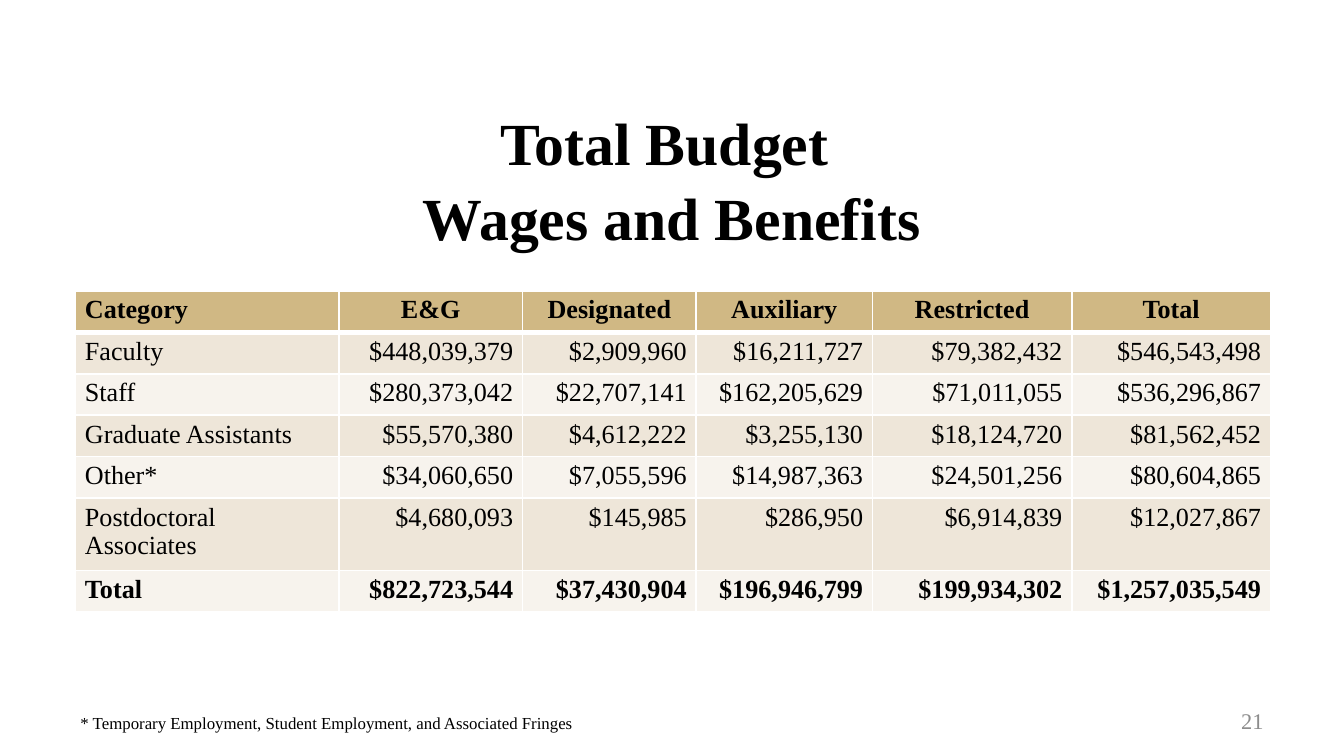
import dataclasses

import lxml.etree
import pptx
import pptx.dml.color
import pptx.enum.text
import pptx.oxml.ns
import pptx.util

Pt = pptx.util.Pt
ALIGN = pptx.enum.text.PP_ALIGN
ANCHOR = pptx.enum.text.MSO_ANCHOR
LEFT, MID, RIGHT = ALIGN.LEFT, ALIGN.CENTER, ALIGN.RIGHT
FONT = "Times New Roman"
HEAD, BANDS = "D0B884", ("EEE6D9", "F7F3ED")
WIDTHS = (141, 98.5, 93, 94.5, 106.75, 106.5)
LINE, TALL = 22.25, 38.75


@dataclasses.dataclass
class Row:
    name: str
    sums: tuple[str, ...]
    bold: bool = False
    high: float = LINE


@dataclasses.dataclass
class Label:
    text: str
    box: tuple[float, float, float, float]
    size: float
    align: int = LEFT
    anchor: int = ANCHOR.MIDDLE
    color: str = "000000"
    bold: bool = False
    space: float = 1


ROWS = (
    Row("Category", ("E&G", "Designated", "Auxiliary", "Restricted", "Total"), True),
    Row("Faculty", ("$448,039,379", "$2,909,960", "$16,211,727", "$79,382,432", "$546,543,498")),
    Row("Staff", ("$280,373,042", "$22,707,141", "$162,205,629", "$71,011,055", "$536,296,867")),
    Row("Graduate Assistants", ("$55,570,380", "$4,612,222", "$3,255,130", "$18,124,720", "$81,562,452")),
    Row("Other*", ("$34,060,650", "$7,055,596", "$14,987,363", "$24,501,256", "$80,604,865")),
    Row("Postdoctoral Associates", ("$4,680,093", "$145,985", "$286,950", "$6,914,839", "$12,027,867"), high=TALL),
    Row("Total", ("$822,723,544", "$37,430,904", "$196,946,799", "$199,934,302", "$1,257,035,549"), True),
)

LABELS = (
    Label("Total Budget \vWages and Benefits", (36, 58.25, 648, 73.5), 32, MID, bold=True, space=1.05),
    Label("21", (516, 375, 168, 21.5), 12, RIGHT, color="8C8C8C"),
    Label("* Temporary Employment, Student Employment, and Associated Fringes",
          (36, 378, 633, 18), 9, anchor=ANCHOR.TOP),
)


def tint(code: str) -> pptx.dml.color.RGBColor:
    return pptx.dml.color.RGBColor.from_string(code)


def write(frame, text: str, *, size: float, align: int = LEFT, color: str = "000000",
          bold: bool = False, space: float = 1) -> None:
    frame.word_wrap = True
    para = frame.paragraphs[0]
    para.text = text
    para.alignment = align
    para.line_spacing = space
    for run in para.runs:
        run.font.name = FONT
        run.font.size = Pt(size)
        run.font.bold = bold
        run.font.color.rgb = tint(color)


def edge(cell, side: str, width: float) -> None:
    name = pptx.oxml.ns.qn
    line = lxml.etree.SubElement(cell._tc.get_or_add_tcPr(), name(f"a:ln{side}"), w=str(Pt(width)))
    fill = lxml.etree.SubElement(line, name("a:solidFill"))
    lxml.etree.SubElement(fill, name("a:srgbClr"), val="FFFFFF")


def label(slide, item: Label) -> None:
    frame = slide.shapes.add_textbox(*map(Pt, item.box)).text_frame
    frame.vertical_anchor = item.anchor
    write(frame, item.text, size=item.size, align=item.align, color=item.color,
          bold=item.bold, space=item.space)


def budget(slide, rows: tuple[Row, ...]) -> None:
    high = sum(row.high for row in rows)
    table = slide.shapes.add_table(len(rows), len(WIDTHS), Pt(40.5), Pt(155.75),
                                   Pt(sum(WIDTHS)), Pt(high)).table
    table.first_row = table.horz_banding = False
    for col, width in zip(table.columns, WIDTHS):
        col.width = Pt(width)
    for r, row in enumerate(rows):
        table.rows[r].height = Pt(row.high)
        for c, text in enumerate((row.name, *row.sums)):
            cell = table.cell(r, c)
            cell.margin_left = cell.margin_right = Pt(5)
            cell.margin_top = cell.margin_bottom = Pt(2.5)
            align = LEFT if c == 0 else MID if r == 0 else RIGHT
            write(cell.text_frame, text, size=14, align=align, bold=row.bold)
            for side, width in zip("LRTB", (1, 1, 3 if r == 1 else 1, 3 if r == 0 else 1)):
                edge(cell, side, width)
            cell.fill.solid()
            cell.fill.fore_color.rgb = tint(HEAD if r == 0 else BANDS[(r - 1) % 2])


def main() -> None:
    deck = pptx.Presentation()
    deck.slide_width, deck.slide_height = Pt(720), Pt(405)
    slide = deck.slides.add_slide(deck.slide_layouts[6])
    for item in LABELS:
        label(slide, item)
    budget(slide, ROWS)
    deck.save("out.pptx")


if __name__ == "__main__":
    main()
